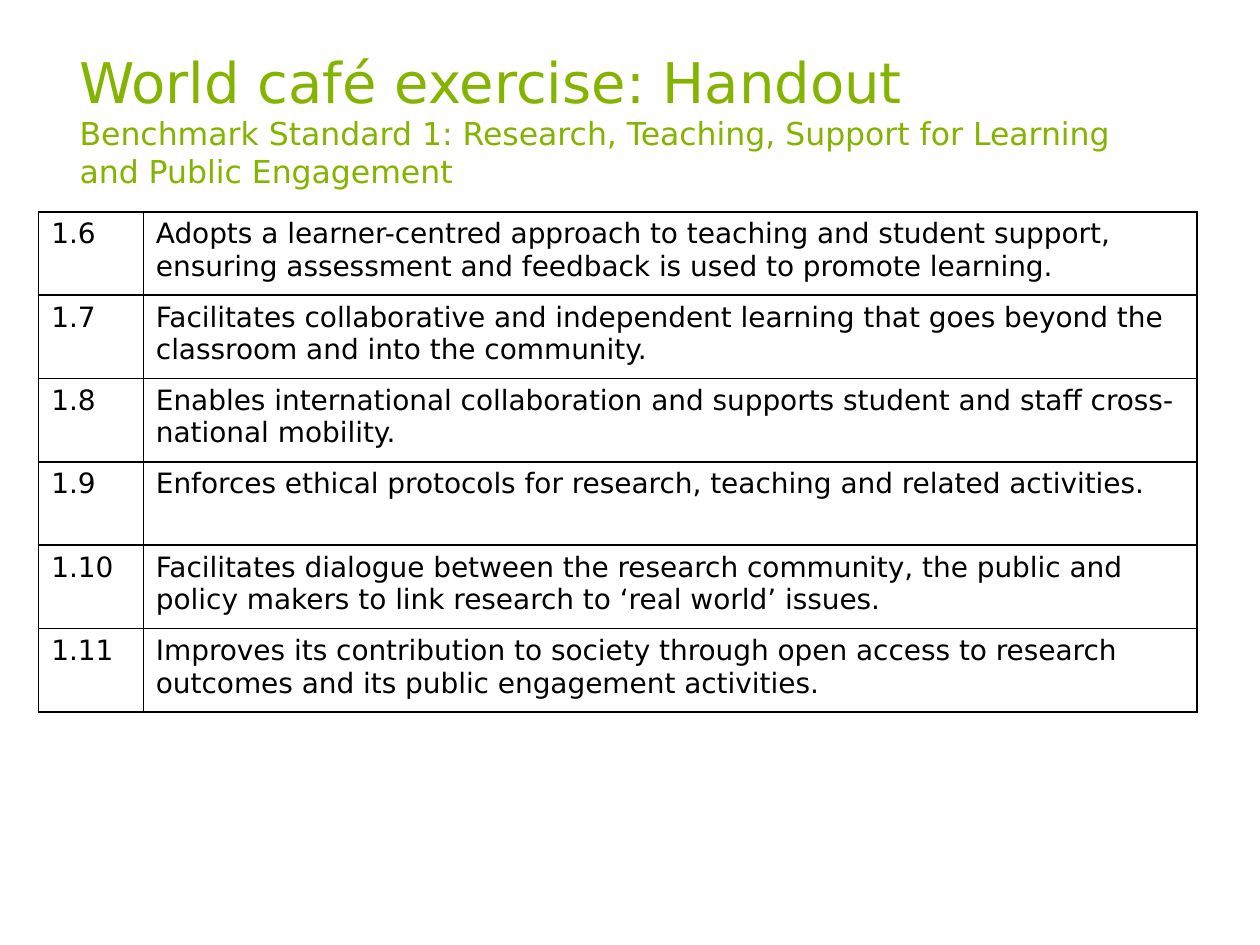
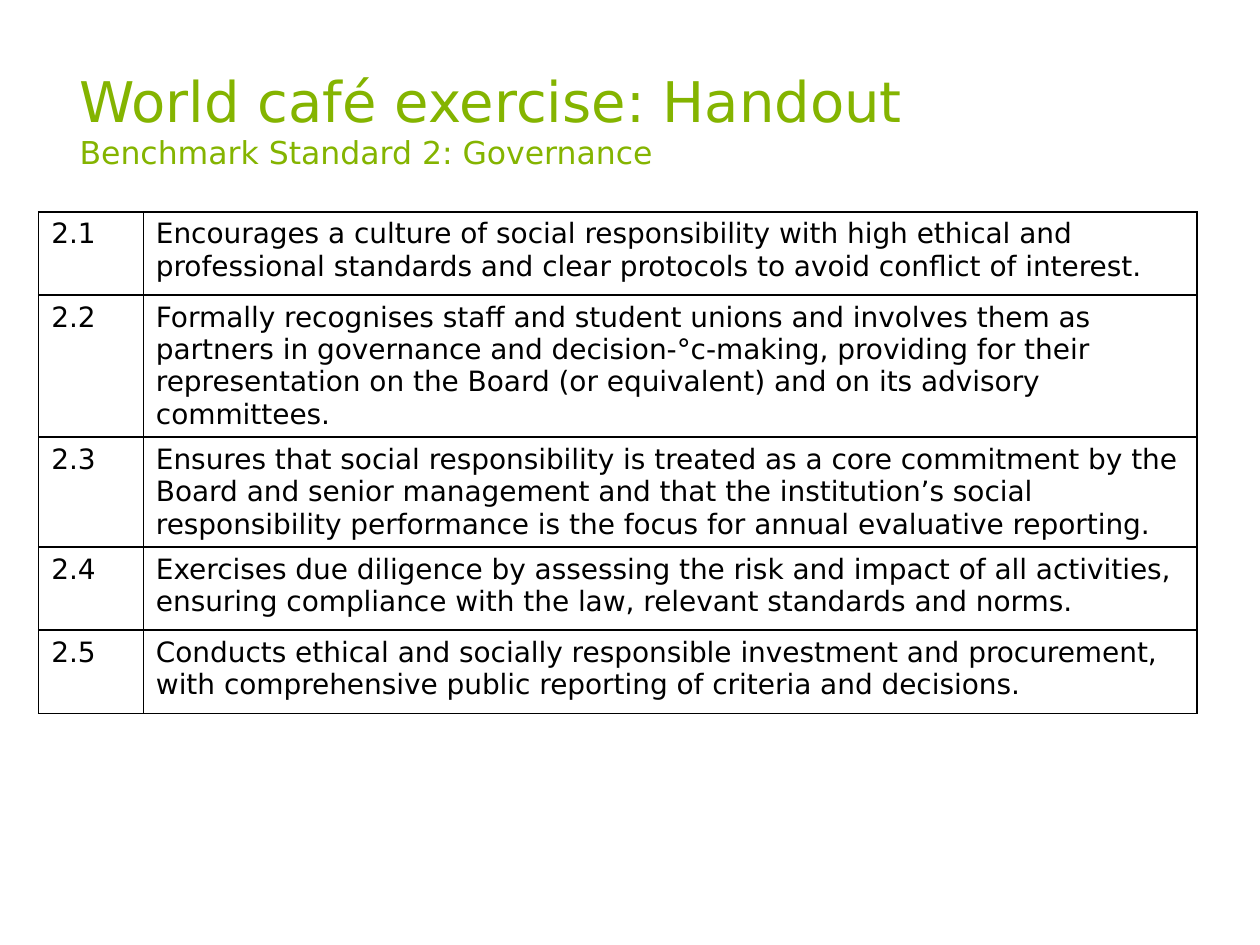
"""Build the two world café handout slides with their benchmark tables."""
from dataclasses import dataclass

from lxml import etree
from pptx import Presentation
from pptx import util as u
from pptx.dml.color import RGBColor
from pptx.enum import text
from pptx.oxml import ns

HEADING = "World café exercise: Handout"
HANDOUTS = [
    {
        "standard": "Benchmark Standard 1: Research, Teaching, Support for Learning and Public Engagement",
        "criteria": [
            ("1.6", "Adopts a learner-centred approach to teaching and student support, ensuring assessment and feedback is used to promote learning."),
            ("1.7", "Facilitates collaborative and independent learning that goes beyond the classroom and into the community."),
            ("1.8", "Enables international collaboration and supports student and staff cross-national mobility."),
            ("1.9", "Enforces ethical protocols for research, teaching and related activities."),
            ("1.10", "Facilitates dialogue between the research community, the public and policy makers to link research to ‘real world’ issues."),
            ("1.11", "Improves its contribution to society through open access to research outcomes and its public engagement activities."),
        ],
    },
    {
        "standard": "Benchmark Standard 2: Governance",
        "criteria": [
            ("2.1", "Encourages a culture of social responsibility with high ethical and professional standards and clear protocols to avoid conflict of interest."),
            ("2.2", "Formally recognises staff and student unions and involves them as partners in governance and decision-°c‐making, providing for their representation on the Board (or equivalent) and on its advisory committees."),
            ("2.3", "Ensures that social responsibility is treated as a core commitment by the Board and senior management and that the institution’s social responsibility performance is the focus for annual evaluative reporting."),
            ("2.4", "Exercises due diligence by assessing the risk and impact of all activities, ensuring compliance with the law, relevant standards and norms."),
            ("2.5", "Conducts ethical and socially responsible investment and procurement, with comprehensive public reporting of criteria and decisions."),
        ],
    },
]


@dataclass(frozen=True)
class Theme:
    """Colours, type and border weight shared by the slides."""
    font: str = "DejaVu Sans"
    green: str = "84B400"
    black: str = "000000"
    heading: int = 32
    standard: int = 18
    body: int = 16
    border: int = 1


THEME = Theme()
TITLE_BOX = (u.Cm(1.35), u.Cm(0.99), u.Cm(22.2), u.Cm(2.8))
TABLE_LEFT, TABLE_TOP = u.Cm(0.78), u.Cm(4.27)
COLUMN_WIDTHS = (u.Cm(2.11), u.Cm(21.24))
ROW_HEIGHT = u.Cm(1.68)


def add_span(para, words, size, colour):
    """Add one styled run to a paragraph."""
    span = para.add_run()
    span.text = words
    span.font.name = THEME.font
    span.font.size = u.Pt(size)
    span.font.color.rgb = RGBColor.from_string(colour)


def add_title(page, standard):
    """Place the shared heading and the name of the standard."""
    title = page.shapes.title
    title.left, title.top, title.width, title.height = TITLE_BOX
    frame = title.text_frame
    frame.word_wrap = True
    frame.auto_size = text.MSO_AUTO_SIZE.NONE
    frame.vertical_anchor = text.MSO_ANCHOR.MIDDLE
    para = frame.paragraphs[0]
    para.alignment = text.PP_ALIGN.LEFT
    add_span(para, HEADING, THEME.heading, THEME.green)
    para.add_line_break()
    add_span(para, standard, THEME.standard, THEME.green)


def outline_cell(cell):
    """Draw a thin line on all four sides of a cell."""
    properties = cell._tc.get_or_add_tcPr()
    for position, side in enumerate(("lnL", "lnR", "lnT", "lnB")):
        line = etree.Element(ns.qn(f"a:{side}"), w=str(u.Pt(THEME.border)))
        fill = etree.SubElement(line, ns.qn("a:solidFill"))
        etree.SubElement(fill, ns.qn("a:srgbClr"), val=THEME.black)
        properties.insert(position, line)


def add_criteria(page, criteria):
    """Add the table of numbered criteria."""
    table = page.shapes.add_table(
        len(criteria), len(COLUMN_WIDTHS), TABLE_LEFT, TABLE_TOP,
        sum(COLUMN_WIDTHS), ROW_HEIGHT * len(criteria)).table
    table.first_row = table.horz_banding = False
    for column, width in zip(table.columns, COLUMN_WIDTHS):
        column.width = width
    for row, criterion in zip(table.rows, criteria):
        row.height = ROW_HEIGHT
        for cell, words in zip(row.cells, criterion):
            cell.fill.background()
            outline_cell(cell)
            add_span(cell.text_frame.paragraphs[0], words, THEME.body, THEME.black)


def main():
    """Build and save the deck."""
    deck = Presentation()
    deck.slide_width, deck.slide_height = u.Cm(25.4), u.Cm(19.05)
    title_only = deck.slide_layouts.get_by_name("Title Only")
    for handout in HANDOUTS:
        page = deck.slides.add_slide(title_only)
        add_title(page, handout["standard"])
        add_criteria(page, handout["criteria"])
    deck.save("out.pptx")


if __name__ == "__main__":
    main()
